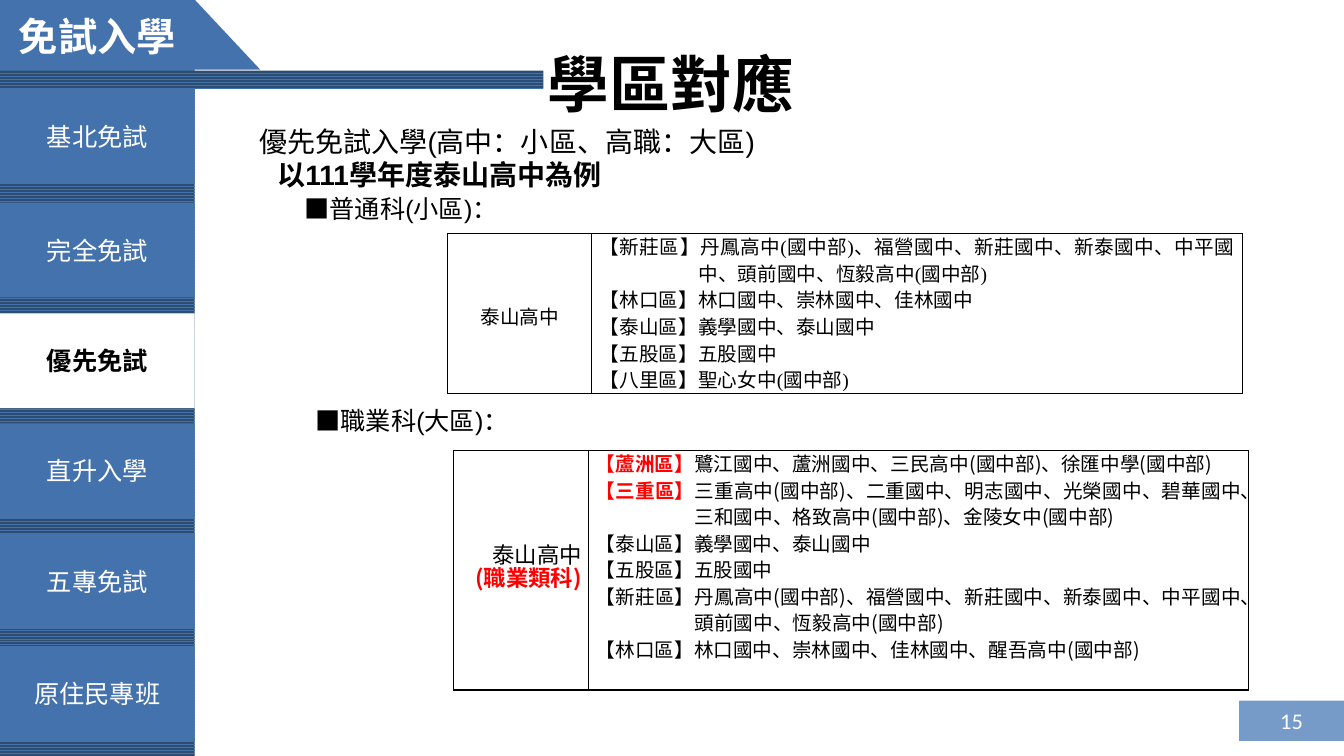
"""Builds the school district slide for priority exam-free admission."""
from lxml.etree import SubElement
from pptx import Presentation
from pptx.dml.color import RGBColor
from pptx.enum.dml import MSO_PATTERN
from pptx.enum.shapes import MSO_SHAPE
from pptx.enum.text import MSO_ANCHOR, MSO_AUTO_SIZE, PP_ALIGN
from pptx.oxml.ns import qn
from pptx.util import Inches, Pt

BLUE = RGBColor(0x44, 0x72, 0xAC)
NAVY = RGBColor(0x2D, 0x4C, 0x72)
LIGHT = RGBColor(0x76, 0x9B, 0xC9)
WHITE = RGBColor(0xFF, 0xFF, 0xFF)
BLACK = RGBColor(0, 0, 0)
RED = RGBColor(0xFF, 0, 0)


def add_box(at, fill, text="", kind=MSO_SHAPE.RECTANGLE, **fmt):
    sp = s.shapes.add_shape(kind, *map(Inches, at))
    sp.shadow.inherit = False
    sp.line.fill.background()
    if fill is None:
        sp.fill.patterned()
        sp.fill.pattern = MSO_PATTERN.ZIG_ZAG
        sp.fill.fore_color.rgb, sp.fill.back_color.rgb = BLUE, NAVY
    else:
        sp.fill.solid()
        sp.fill.fore_color.rgb = fill
    if text:
        sp.text_frame.vertical_anchor = MSO_ANCHOR.MIDDLE
        write(sp.text_frame.paragraphs[0], text, align=PP_ALIGN.CENTER, **fmt)


def write(p, text, align=PP_ALIGN.LEFT, color=BLACK, spacing=None, left=0, hang=0, **fmt):
    r = p.add_run()
    r.text = text
    for key, value in fmt.items():
        setattr(r.font, key, value)
    r.font.color.rgb = color
    p.alignment = align
    if spacing:
        p.line_spacing = spacing
    pPr = p._p.get_or_add_pPr()
    pPr.set("marL", str(Inches(left)))
    pPr.set("indent", str(-Inches(hang)))


prs = Presentation()
prs.slide_width, prs.slide_height = Inches(13.33), Inches(7.5)
s = prs.slides.add_slide(prs.slide_layouts[1])

add_box((1.27, -0.01, 1.31, 0.7), BLUE, kind=MSO_SHAPE.ISOSCELES_TRIANGLE)
add_box((0, -0.01, 1.93, 0.74), BLUE, "免試入學",
        name="Calibri", size=Pt(28), bold=True, color=WHITE)
add_box((0, 0.86, 1.93, 6.64), None)
add_box((0, 0.7, 5.39, 0.18), None)
add_box((12.29, 6.95, 1.04, 0.4), LIGHT, "15", name="Calibri", size=Pt(16), color=WHITE)

menu = [
    (0.88, "基北免試"), (2.01, "完全免試"), (3.11, "優先免試"),
    (4.2, "直升入學"), (5.3, "五專免試"), (6.41, "原住民專班"),
]
for top, label in menu:
    active = label == "優先免試"
    add_box((0, top, 1.93, 0.94), WHITE if active else BLUE, label, name="Calibri",
            size=Pt(18), bold=active, color=BLACK if active else WHITE)

title, body = s.shapes.title, s.placeholders[1]
for sp, at in ((title, (3.08, 0.45, 7.15, 0.74)), (body, (2.47, 1.19, 8.67, 3.2))):
    sp.left, sp.top, sp.width, sp.height = map(Inches, at)
    sp.text_frame.auto_size = MSO_AUTO_SIZE.NONE
    sp.text_frame.word_wrap = True
tf = title.text_frame
for side in ("left", "right", "top", "bottom"):
    setattr(tf, f"margin_{side}", 0)
write(tf.paragraphs[0], "學區對應", align=PP_ALIGN.CENTER,
      name="Calibri", size=Pt(44), bold=True)

lines = [
    ("優先免試入學(高中：小區、高職：大區)", 20, False, 0, 0),
    ("以111學年度泰山高中為例", 20, True, 0.18, 0),
    ("■普通科(小區)：", 18, False, 0.45, 0),
    ("■職業科(大區)：", 18, False, 0.56, 128),
]
tf = body.text_frame
for i, (text, size, bold, left, before) in enumerate(lines):
    p = tf.add_paragraph() if i else tf.paragraphs[0]
    write(p, text, spacing=Pt(23.5), left=left, name="Arial", size=Pt(size), bold=bold)
    p.space_before = Pt(before)
    SubElement(p._p.get_or_add_pPr(), qn("a:buNone"))

XINZHUANG = ("【新莊區】", "丹鳳高中(國中部)、福營國中、新莊國中、新泰國中、中平國中、"
             "頭前國中、恆毅高中(國中部)", 0.98)
TAISHAN = ("【泰山區】", "義學國中、泰山國中", 0.83)
WUGU = ("【五股區】", "五股國中", 0.83)
general = [
    XINZHUANG,
    ("【林口區】", "林口國中、崇林國中、佳林國中", 0.83),
    TAISHAN,
    WUGU,
    ("【八里區】", "聖心女中(國中部)", 0.83),
]
vocational = [
    ("【蘆洲區】", "鷺江國中、蘆洲國中、三民高中(國中部)、徐匯中學(國中部)", 0.83),
    ("【三重區】", "三重高中(國中部)、二重國中、明志國中、光榮國中、碧華國中、"
     "三和國中、格致高中(國中部)、金陵女中(國中部)", 0.98),
    TAISHAN,
    WUGU,
    XINZHUANG,
    ("【林口區】", "林口國中、崇林國中、佳林國中、醒吾高中(國中部)", 0.83),
]
tables = [
    ((4.44, 2.32, 7.88, 1.58), (1.43, 6.45), 0.08, "Times New Roman", general,
     ["泰山高中"], dict(align=PP_ALIGN.CENTER, spacing=Pt(24), size=Pt(14))),
    ((4.5, 4.47, 7.88, 2.28), (1.34, 6.54), 0.07, "Noto Sans CJK SC", vocational,
     ["泰山高中", "(職業類科)"], dict(align=PP_ALIGN.RIGHT, spacing=Pt(16), size=Pt(16))),
]
for at, widths, margin, font, districts, school, fmt in tables:
    table = s.shapes.add_table(1, 2, *map(Inches, at)).table
    table.first_row = table.horz_banding = False
    for col, width in enumerate(widths):
        table.columns[col].width = Inches(width)
        cell = table.cell(0, col)
        cell.margin_left = cell.margin_right = Inches(margin)
        cell.margin_top = cell.margin_bottom = 0
        tcPr = cell._tc.get_or_add_tcPr()
        for edge in ("lnL", "lnR", "lnT", "lnB"):
            ln = SubElement(tcPr, qn(f"a:{edge}"), w=str(Pt(1)))
            SubElement(SubElement(ln, qn("a:solidFill")), qn("a:srgbClr"), val=str(BLACK))
        cell.fill.background()

    cell = table.cell(0, 0)
    cell.vertical_anchor = MSO_ANCHOR.MIDDLE
    for i, text in enumerate(school):
        p = cell.text_frame.add_paragraph() if i else cell.text_frame.paragraphs[0]
        write(p, text, color=RED if i else BLACK, bold=i > 0, name=font, **fmt)

    tf = table.cell(0, 1).text_frame
    for i, (district, schools, hang) in enumerate(districts):
        p = tf.add_paragraph() if i else tf.paragraphs[0]
        marked = district in ("【蘆洲區】", "【三重區】")
        for text, red in ((district, marked), (schools, False)):
            write(p, text, align=PP_ALIGN.JUSTIFY, spacing=Pt(19), left=hang, hang=hang,
                  color=RED if red else BLACK, bold=red, name=font, size=Pt(14))

prs.save("out.pptx")
